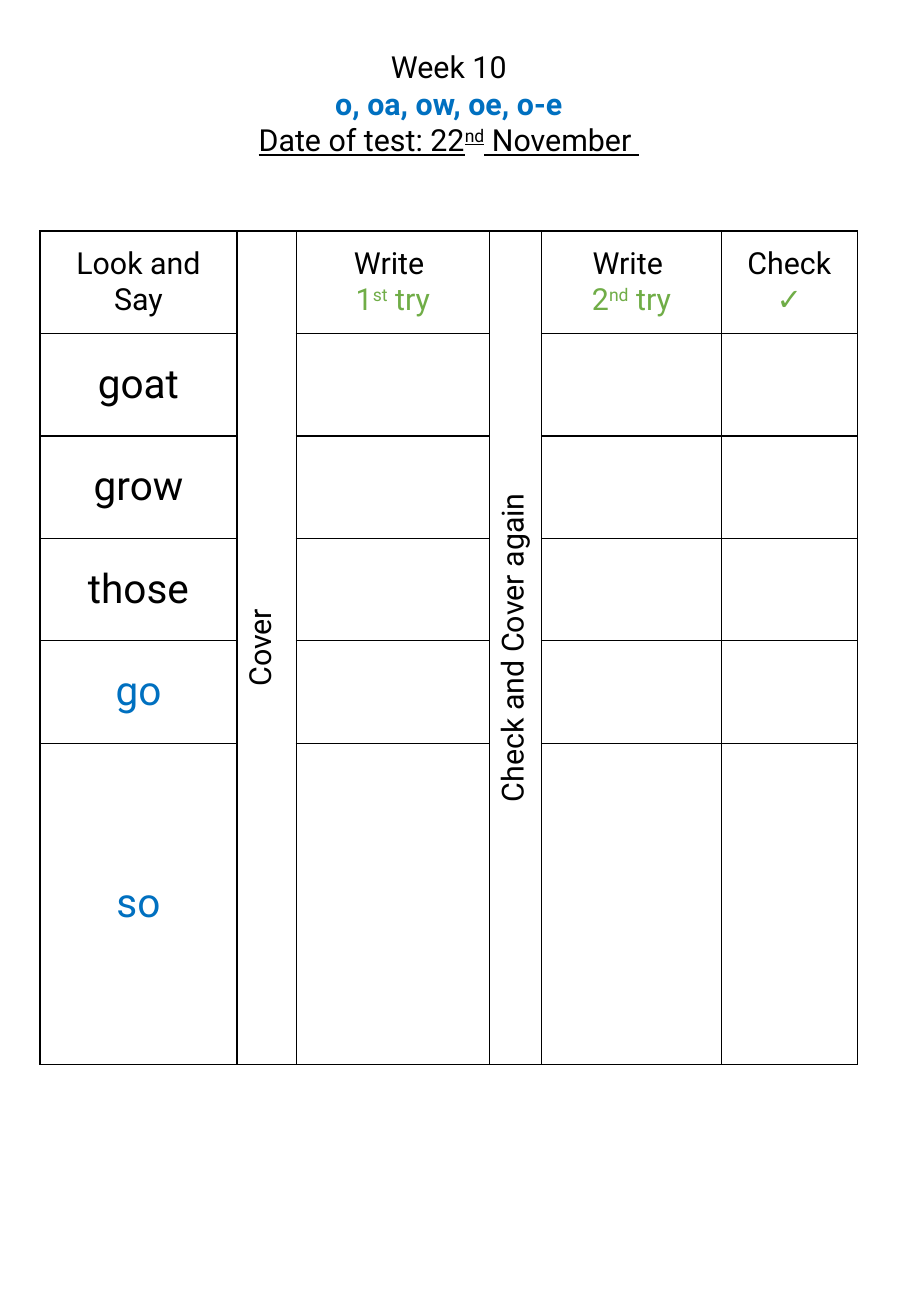
from dataclasses import dataclass

from lxml import etree
from pptx import Presentation
from pptx.dml.color import RGBColor
from pptx.enum.text import MSO_ANCHOR, MSO_AUTO_SIZE, PP_ALIGN
from pptx.oxml.ns import qn
from pptx.slide import Slide
from pptx.table import _Cell
from pptx.text.text import TextFrame
from pptx.util import Pt

CENTER = PP_ALIGN.CENTER
TOP = MSO_ANCHOR.TOP
MIDDLE = MSO_ANCHOR.MIDDLE
GROW = MSO_AUTO_SIZE.SHAPE_TO_FIT_TEXT
TITLE_ONLY = 5

FONT = "Roboto"
BLACK = "000000"
WHITE = "FFFFFF"
BLUE = "0070C0"
GREEN = "70AD47"

LEFT = 23.76
WIDTH = 484.56
COLUMN_WIDTHS = (116.64, 35.28, 114.48, 30.96, 106.56, 80.64)
ROW_HEIGHT = 60.72


@dataclass(frozen=True)
class Piece:
    text: str
    color: str = BLACK
    size: float = 18
    bold: bool = False
    underline: bool = False
    raised: bool = False


Lines = list[list[Piece]]


@dataclass(frozen=True)
class Heading:
    column: int
    lines: Lines
    tall: bool = False


def try_lines(number: str, ending: str) -> Lines:
    return [
        [Piece("Write ")],
        [Piece(number, GREEN), Piece(ending, GREEN, raised=True), Piece(" try", GREEN)],
    ]


TITLE: Lines = [
    [Piece("Week 10")],
    [Piece("o, oa, ow, oe, o-e", BLUE, bold=True)],
    [
        Piece("Date of test: 22", underline=True),
        Piece("nd", underline=True, raised=True),
        Piece(" November ", underline=True),
    ],
]
HEADINGS = [
    Heading(0, [[Piece("Look and Say")]]),
    Heading(1, [[Piece("Cover")]], tall=True),
    Heading(2, try_lines("1", "st")),
    Heading(3, [[Piece("Check and Cover again")]], tall=True),
    Heading(4, try_lines("2", "nd")),
    Heading(5, [[Piece("Check")], [Piece("✓", GREEN)]]),
]
SPELLINGS = [
    Piece("goat", size=24),
    Piece("grow", size=24),
    Piece("those", size=24),
    Piece("go", BLUE, 24),
    Piece("so", BLUE, 24),
]


def rgb(color: str) -> RGBColor:
    return RGBColor.from_string(color)


def write(frame: TextFrame, lines: Lines) -> None:
    for index, pieces in enumerate(lines):
        paragraph = frame.add_paragraph() if index else frame.paragraphs[0]
        paragraph.alignment = CENTER
        for piece in pieces:
            run = paragraph.add_run()
            run.text = piece.text
            run.font.name = FONT
            run.font.size = Pt(piece.size)
            run.font.bold = piece.bold
            run.font.underline = piece.underline
            run.font.color.rgb = rgb(piece.color)
            if piece.raised:
                run._r.get_or_add_rPr().set("baseline", "30000")


def style_cell(cell: _Cell) -> None:
    properties = cell._tc.get_or_add_tcPr()
    for side in ("lnL", "lnR", "lnT", "lnB"):
        border = etree.SubElement(properties, qn(f"a:{side}"), w=str(Pt(1)))
        fill = etree.SubElement(border, qn("a:solidFill"))
        etree.SubElement(fill, qn("a:srgbClr"), val=BLACK)
    cell.fill.solid()
    cell.fill.fore_color.rgb = rgb(WHITE)
    cell.vertical_anchor = MIDDLE


def add_title(slide: Slide) -> None:
    title = slide.shapes.title
    title.left, title.top = Pt(LEFT), Pt(25.2)
    title.width, title.height = Pt(WIDTH), Pt(72.72)
    frame = title.text_frame
    frame.word_wrap = True
    frame.auto_size = GROW
    frame.vertical_anchor = TOP
    write(frame, TITLE)


def add_spelling_table(slide: Slide) -> None:
    row_count = len(SPELLINGS) + 1
    table = slide.shapes.add_table(
        row_count, len(COLUMN_WIDTHS),
        Pt(LEFT), Pt(136.8), Pt(WIDTH), Pt(ROW_HEIGHT * row_count),
    ).table
    table.first_row = False
    table.horz_banding = False
    for column, width in zip(table.columns, COLUMN_WIDTHS):
        column.width = Pt(width)
    for row in table.rows:
        row.height = Pt(ROW_HEIGHT)
    for cell in table.iter_cells():
        style_cell(cell)
    for heading in HEADINGS:
        cell = table.cell(0, heading.column)
        if heading.tall:
            cell.merge(table.cell(row_count - 1, heading.column))
            cell._tc.get_or_add_tcPr().set("vert", "vert270")
        write(cell.text_frame, heading.lines)
    for row_index, spelling in enumerate(SPELLINGS, start=1):
        write(table.cell(row_index, 0).text_frame, [[spelling]])


def main() -> None:
    presentation = Presentation()
    presentation.slide_width = Pt(540)
    presentation.slide_height = Pt(779.76)
    slide = presentation.slides.add_slide(presentation.slide_layouts[TITLE_ONLY])
    add_title(slide)
    add_spelling_table(slide)
    presentation.save("out.pptx")


if __name__ == "__main__":
    main()
